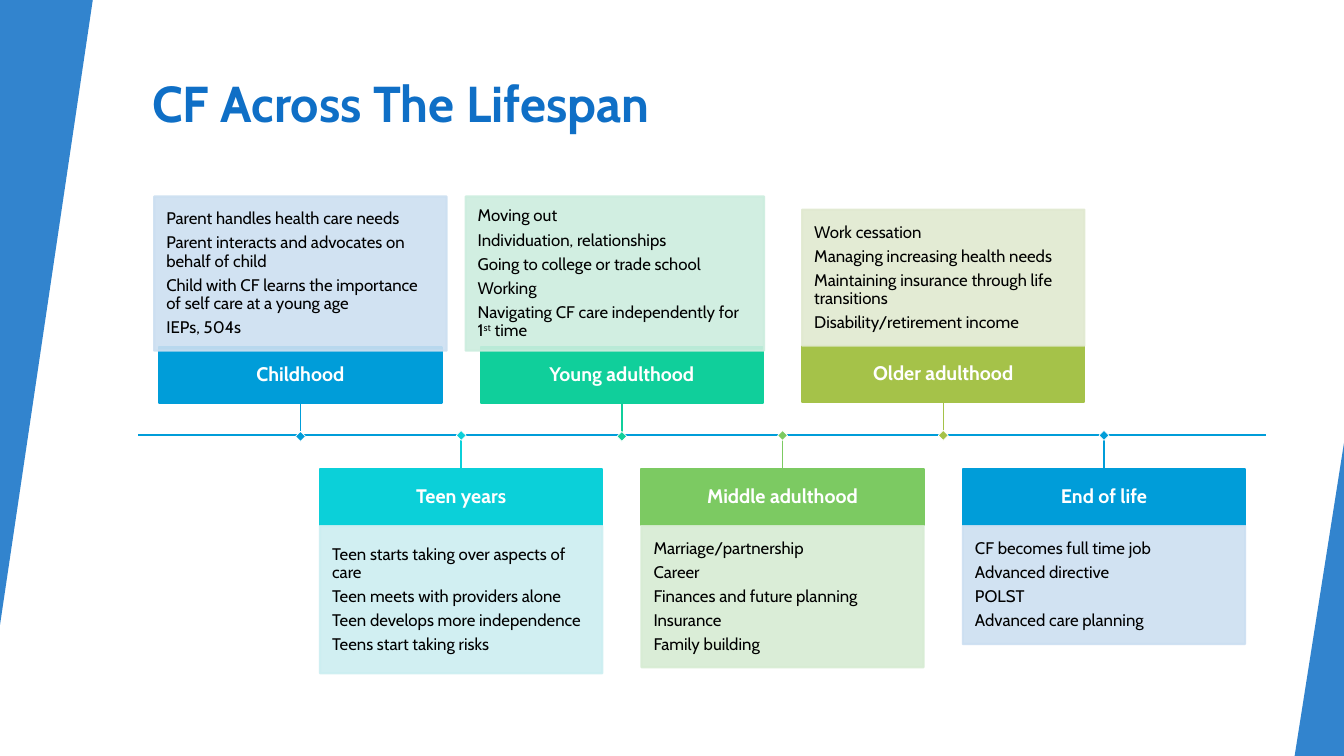
from lxml import etree
from pptx import Presentation
from pptx.dml.color import RGBColor
from pptx.enum.shapes import MSO_CONNECTOR, MSO_SHAPE
from pptx.enum.text import MSO_ANCHOR, PP_ALIGN
from pptx.oxml.ns import qn
from pptx.util import Inches, Pt

RECT, TRI = MSO_SHAPE.RECTANGLE, MSO_SHAPE.ISOSCELES_TRIANGLE
LINE = MSO_CONNECTOR.STRAIGHT
TOP, MID = MSO_ANCHOR.TOP, MSO_ANCHOR.MIDDLE
LEFT, CENTER = PP_ALIGN.LEFT, PP_ALIGN.CENTER
FONT = "Cabin"

# Content: label, colour, list box (left shift, width, height), drop, lines
# ^ switches superscript on and off
TITLE = "CF Across The Lifespan"
STAGES = [
    ("Childhood", "blue", (-0.05, 2.9, 1.53), 0.01, [
        "Parent handles health care needs",
        "Parent interacts and advocates on behalf of child",
        "Child with CF learns the importance of self care at a young age",
        "IEPs, 504s"]),
    ("Teen years", "cyan", (0, 2.8, 1.46), 0, [
        "Teen starts taking over aspects of care",
        "Teen meets with providers alone",
        "Teen develops more independence",
        "Teens start taking risks"]),
    ("Young adulthood", "mint", (-0.15, 2.96, 1.53), 0.01, [
        "Moving out",
        "Individuation, relationships",
        "Going to college or trade school",
        "Working",
        "Navigating CF care independently for 1^st^ time"]),
    ("Middle adulthood", "green", (0, 2.8, 1.4), 0, [
        "Marriage/partnership",
        "Career",
        "Finances and future planning",
        "Insurance",
        "Family building"]),
    ("Older adulthood", "olive", (0, 2.8, 1.35), 0, [
        "Work cessation",
        "Managing increasing health needs",
        "Maintaining insurance through life transitions",
        "Disability/retirement income"]),
    ("End of life", "blue", (0, 2.8, 1.17), 0, [
        "CF becomes full time job",
        "Advanced directive",
        "POLST",
        "Advanced care planning"]),
]
HEX = {"title": "0F6FC6", "white": "FFFFFF", "black": "000000",
       "blue": "009DD9", "cyan": "0BD0D9", "mint": "10CF9B",
       "green": "7CCA62", "olive": "A5C249"}
PALE = {"blue": "CCDFF1", "cyan": "CCEEF1", "mint": "CCEDDE",
        "green": "D7ECD3", "olive": "E1E9D0"}

# Grid in inches
WIDE, HIGH = 13.33, 7.5
START, PITCH = 1.58, 1.594
BOX_W, BOX_H = 2.8, 0.56
AXIS, UP, DOWN = 4.32, 3.43, 4.65
GEM = 0.07

deck = Presentation()
deck.slide_width, deck.slide_height = Inches(WIDE), Inches(HIGH)
slide = deck.slides.add_slide(deck.slide_layouts[5])
shapes = slide.shapes


def fade(color, share):
    """Set the opacity of every solid colour below an element."""
    for node in color.iter(qn("a:srgbClr")):
        alpha = etree.SubElement(node, qn("a:alpha"))
        alpha.set("val", str(share * 1000))


def block(kind, x, y, w, h, fill, edge=None, weight=1.5, share=100):
    shape = shapes.add_shape(kind, *map(Inches, (x, y, w, h)))
    shape.shadow.inherit = False
    shape.fill.solid()
    shape.fill.fore_color.rgb = RGBColor.from_string(fill)
    if edge:
        shape.line.color.rgb = RGBColor.from_string(edge)
        shape.line.width = Pt(weight)
    else:
        shape.line.fill.background()
    if share < 100:
        fade(shape._element.spPr, share)
    return shape


def rule(x1, y1, x2, y2, color, weight):
    line = shapes.add_connector(LINE, *map(Inches, (x1, y1, x2, y2)))
    line.line.color.rgb = RGBColor.from_string(color)
    line.line.width = Pt(weight)
    etree.SubElement(line._element.spPr, qn("a:effectLst"))
    return line


def write(shape, lines, size, color, bold, align, inset):
    frame = shape.text_frame
    frame.word_wrap = True
    frame.vertical_anchor = MID
    frame.margin_left = frame.margin_right = Inches(inset)
    frame.margin_top = frame.margin_bottom = Inches(inset)
    for i, text in enumerate(lines):
        para = frame.add_paragraph() if i else frame.paragraphs[0]
        para.alignment = align
        para.line_spacing = 0.9
        para.space_after = Pt(size * 0.35)
        for j, part in enumerate(text.split("^")):
            run = para.add_run()
            run.text = part
            font = run.font
            font.name, font.size, font.bold = FONT, Pt(size), bold
            font.color.rgb = RGBColor.from_string(color)
            if j % 2:
                run._r.get_or_add_rPr().set("baseline", "30000")


# Title
head = shapes.title
head.left, head.top, head.width, head.height = map(
    Inches, (1.41, 0.67, 11.15, 1.2))
frame = head.text_frame
frame.text = TITLE
frame.word_wrap = True
frame.vertical_anchor = TOP
para = frame.paragraphs[0]
para.alignment = LEFT
font = para.runs[0].font
font.name, font.size, font.bold = FONT, Pt(36), True
font.color.rgb = RGBColor.from_string(HEX["title"])

# Side wedges
for w, h, turn in ((0.92, 6.2, 180), (0.49, 3.11, 0)):
    x, y = (0, 0) if turn else (WIDE - w, HIGH - h)
    wedge = block(TRI, x, y, w, h, HEX["title"], share=85)
    wedge.adjustments[0] = 1
    wedge.rotation = turn

# Time line
rule(1.37, AXIS, 12.56, AXIS, HEX["blue"], 1.5)

# Stages alternate above and below the line
for i, (name, tone, (shift, w, h), drop, lines) in enumerate(STAGES):
    above = i % 2 == 0
    x = START + i * PITCH
    mid = x + BOX_W / 2
    y = UP + drop if above else DOWN
    color, pale = HEX[tone], PALE[tone]

    label = block(RECT, x, y, BOX_W, BOX_H, color, color)
    write(label, [name], 14, HEX["white"], True, CENTER, 0.08)

    top = (1.95 if drop else y - h) if above else y + BOX_H + 0.01
    notes = block(RECT, x + shift, top, w, h, pale, pale, share=90)
    write(notes, lines, 12, HEX["black"], False, LEFT, 0.12)

    edge = y + BOX_H if above else y
    stem = rule(mid, edge, mid, AXIS + drop, color, 1)
    stem.begin_connect(label, 2 if above else 0)

    gem = block(RECT, mid - GEM / 2, AXIS + drop - GEM / 2, GEM, GEM,
                color, HEX["white"], 0.5)
    gem.rotation = 45

deck.save("out.pptx")
